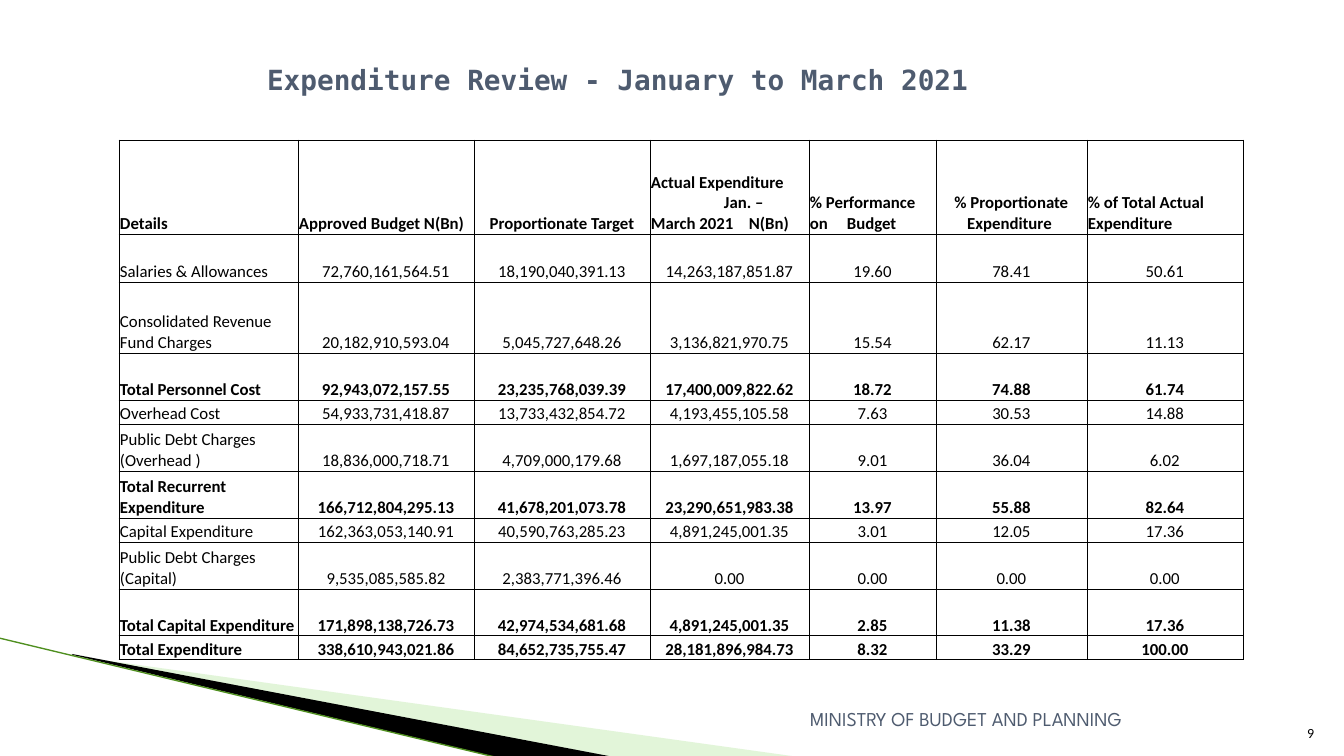
from lxml import etree
from pptx import Presentation
from pptx.dml.color import RGBColor
from pptx.enum.shapes import MSO_CONNECTOR
from pptx.enum.text import MSO_ANCHOR, PP_ALIGN
from pptx.oxml import parse_xml
from pptx.oxml.ns import nsdecls, qn
from pptx.util import Pt

PX = 9072  # one px in EMU
LEFT, CENTER, RIGHT = PP_ALIGN.LEFT, PP_ALIGN.CENTER, PP_ALIGN.RIGHT
TOP, BOTTOM = MSO_ANCHOR.TOP, MSO_ANCHOR.BOTTOM
BLACK = RGBColor(0x00, 0x00, 0x00)
SLATE = RGBColor(0x4E, 0x5B, 0x6F)
PALE_GREEN = RGBColor(0xB8, 0xE7, 0xA1)
LINE_GREEN = RGBColor(0x4F, 0x8F, 0x1F)

COLUMN_WIDTHS = [179, 176, 176, 159, 127, 151, 156]
ROW_HEIGHTS = [94, 48, 71, 47, 24, 47, 47, 24, 47, 47, 24]
CENTERED_HEADERS = (2, 5)
ROWS = [
    ["Details", "Approved Budget N(Bn)", "Proportionate Target",
     "Actual Expenditure\nJan. –\nMarch 2021\tN(Bn)", "% Performance\non\tBudget",
     "% Proportionate Expenditure ", "% of Total Actual Expenditure"],
    ["Salaries & Allowances", "72,760,161,564.51", "18,190,040,391.13",
     "14,263,187,851.87", "19.60", "78.41", "50.61"],
    ["Consolidated Revenue Fund Charges", "20,182,910,593.04", "5,045,727,648.26",
     "3,136,821,970.75", "15.54", "62.17", "11.13"],
    ["Total Personnel Cost", "92,943,072,157.55", "23,235,768,039.39",
     "17,400,009,822.62", "18.72", "74.88", "61.74"],
    ["Overhead Cost", "54,933,731,418.87", "13,733,432,854.72",
     "4,193,455,105.58", "7.63", "30.53", "14.88"],
    ["Public Debt Charges (Overhead )", "18,836,000,718.71", "4,709,000,179.68",
     "1,697,187,055.18", "9.01", "36.04", "6.02"],
    ["Total Recurrent Expenditure", "166,712,804,295.13", "41,678,201,073.78",
     "23,290,651,983.38", "13.97", "55.88", "82.64"],
    ["Capital Expenditure", "162,363,053,140.91", "40,590,763,285.23",
     "4,891,245,001.35", "3.01", "12.05", "17.36"],
    ["Public Debt Charges (Capital)", "9,535,085,585.82", "2,383,771,396.46",
     "0.00", "0.00", "0.00", "0.00"],
    ["Total Capital Expenditure", "171,898,138,726.73", "42,974,534,681.68",
     "4,891,245,001.35", "2.85", "11.38", "17.36"],
    ["Total Expenditure", "338,610,943,021.86", "84,652,735,755.47",
     "28,181,896,984.73", "8.32", "33.29", "100.00"],
]


def write(frame, text, font, size, color, align, bold=False):
    frame.text = text
    frame.word_wrap = True
    for para in frame.paragraphs:
        para.alignment = align
        for span in para.runs:
            span.font.name = font
            span.font.size = Pt(size)
            span.font.bold = bold
            span.font.color.rgb = color


deck = Presentation()
deck.slide_width, deck.slide_height = 1344 * PX, 756 * PX
page = deck.slides.add_slide(deck.slide_layouts[5])

# Corner wedges, whose outlines reach beyond their frames, and the line along them
wedges = [
    ((105, 551, 558, 159), [(74, 656), (799, 757), (613, 757), (74, 655)], PALE_GREEN),
    ((-8, 638, 558, 93), [(72, 654), (614, 757), (500, 758), (73, 655)], BLACK),
]
for (left, top, width, height), points, color in wedges:
    builder = page.shapes.build_freeform(*points[0], scale=PX)
    builder.add_line_segments(points[1:], close=True)
    wedge = builder.convert_to_shape()
    wedge.left, wedge.top = left * PX, top * PX
    wedge.width, wedge.height = width * PX, height * PX
    outline = wedge._element.spPr.find(".//" + qn("a:path"))
    outline.set("w", str(width))
    outline.set("h", str(height))
    for corner, (x, y) in zip(outline.iter(qn("a:pt")), points):
        corner.set("x", str(x - left))
        corner.set("y", str(y - top))
    wedge.shadow.inherit = False
    wedge.fill.solid()
    wedge.fill.fore_color.rgb = color
    wedge.line.fill.background()
    if color == PALE_GREEN:
        tint = wedge._element.spPr.find(".//" + qn("a:srgbClr"))
        etree.SubElement(tint, qn("a:alpha")).set("val", "40000")

edge = page.shapes.add_connector(
    MSO_CONNECTOR.STRAIGHT, -PX, 638 * PX, 499 * PX, 758 * PX)
edge.line.color.rgb = LINE_GREEN
edge.line.width = Pt(0.95)
etree.SubElement(edge._element.spPr, qn("a:effectLst"))

# Title
title = page.shapes.title
title.left, title.top, title.width, title.height = 223 * PX, 33 * PX, 789 * PX, 63 * PX
title.text_frame.vertical_anchor = BOTTOM
title.text_frame.margin_top = title.text_frame.margin_bottom = 0
write(title.text_frame, "Expenditure Review - January to March 2021",
      "DejaVu Sans Mono", 19.8, SLATE, CENTER, bold=True)

# Footer and page number
footers = [
    (1271, 706, 53, "9", "Calibri", 10, BLACK, BOTTOM),
    (702, 702, 430, "MINISTRY OF BUDGET AND PLANNING", "League Spartan", 14, SLATE, TOP),
]
for left, top, width, text, font, size, color, anchor in footers:
    box = page.shapes.add_textbox(left * PX, top * PX, width * PX, 40 * PX)
    box.text_frame.vertical_anchor = anchor
    write(box.text_frame, text, font, size, color, RIGHT)

# Expenditure table
table = page.shapes.add_table(
    len(ROWS), len(COLUMN_WIDTHS), 119 * PX, 140 * PX,
    sum(COLUMN_WIDTHS) * PX, sum(ROW_HEIGHTS) * PX).table
table.first_row = table.horz_banding = False
for column, width in zip(table.columns, COLUMN_WIDTHS):
    column.width = width * PX
for row, height in zip(table.rows, ROW_HEIGHTS):
    row.height = height * PX

for r, texts in enumerate(ROWS):
    bold = r == 0 or texts[0].startswith("Total")
    for c, text in enumerate(texts):
        cell = table.cell(r, c)
        cell.vertical_anchor = BOTTOM
        cell.margin_left = cell.margin_right = cell.margin_top = PX
        cell.margin_bottom = 0
        centered = c in CENTERED_HEADERS if r == 0 else c > 0
        write(cell.text_frame, text, "Calibri", 12, BLACK,
              CENTER if centered else LEFT, bold)
        for side in ("lnL", "lnR", "lnT", "lnB"):
            cell._tc.get_or_add_tcPr().append(parse_xml(
                f'<a:{side} {nsdecls("a")} w="6350"><a:solidFill>'
                f'<a:srgbClr val="{BLACK}"/></a:solidFill></a:{side}>'))
        cell.fill.background()

# Spacing inside the two split headers
actual_lines = table.cell(0, 3).text_frame.paragraphs
performance_lines = table.cell(0, 4).text_frame.paragraphs
actual_lines[1]._p.get_or_add_pPr().set("marL", str(73 * PX))
for para, stop in ((actual_lines[2], 98), (performance_lines[1], 37)):
    para._p.get_or_add_pPr().append(parse_xml(
        f'<a:tabLst {nsdecls("a")}><a:tab pos="{stop * PX}" algn="l"/></a:tabLst>'))

deck.save("out.pptx")
